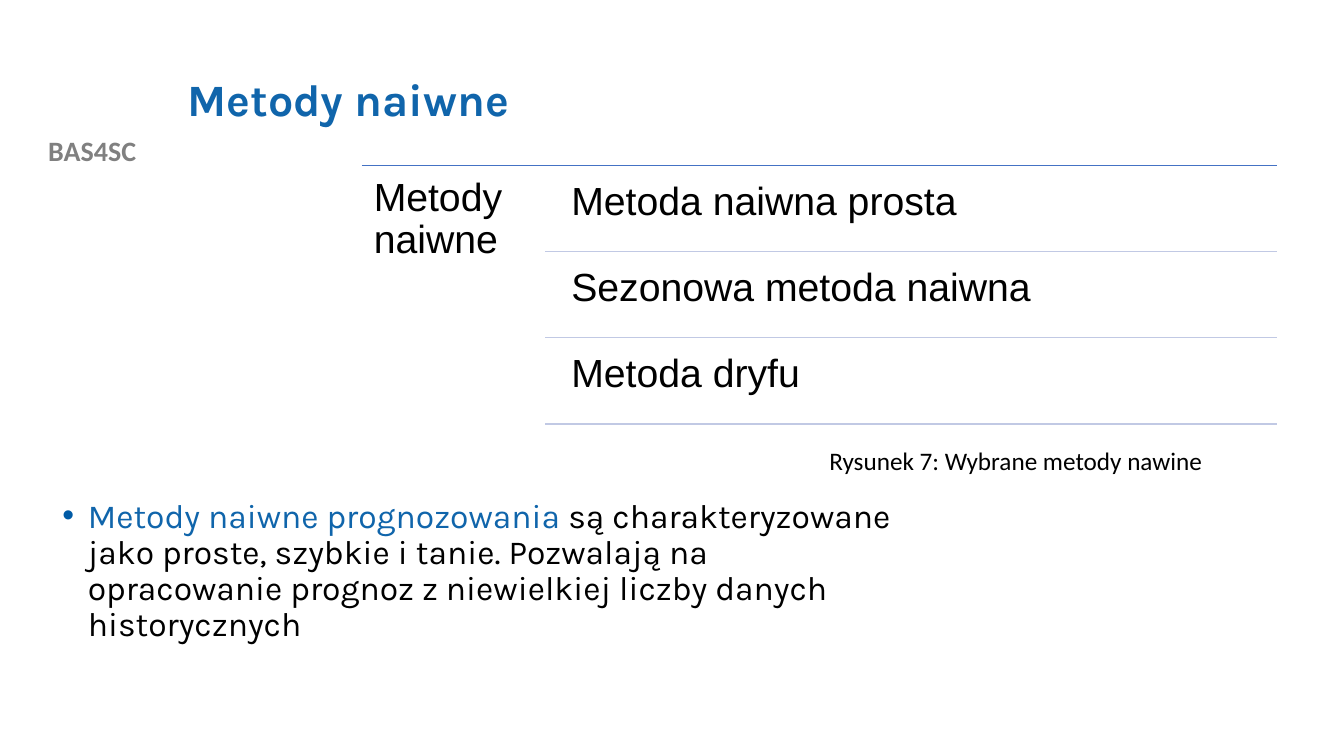
from pptx import Presentation
from pptx.dml.color import RGBColor
from pptx.enum.shapes import MSO_CONNECTOR
from pptx.enum.text import MSO_ANCHOR, MSO_AUTO_SIZE, PP_ALIGN
from pptx.oxml.ns import qn
from pptx.util import Cm, Pt
from lxml.etree import SubElement

BLUE = RGBColor(0x10, 0x65, 0xAB)
DOT = RGBColor(0x01, 0x5B, 0xA6)
GREY = RGBColor(0x80, 0x80, 0x80)
BLACK = RGBColor(0, 0, 0)
RULE = RGBColor(0x44, 0x72, 0xC4)
PALE = RGBColor(0xC1, 0xC9, 0xE4)


class Page:
    """Holds the text styles and the current slide."""

    styles = {
        "title": dict(name="Karla", size=Pt(32), bold=True, color=BLUE),
        "key": dict(name="Karla", size=Pt(24), color=BLUE),
        "body": dict(name="Karla", size=Pt(24), color=BLACK),
        "tag": dict(name="Calibri", size=Pt(20), bold=True, color=GREY),
        "note": dict(name="Calibri", size=Pt(18), color=BLACK),
        "label": dict(name="Arial", size=Pt(28), color=BLACK),
    }

    def __init__(self, deck):
        self.slide = deck.slides.add_slide(deck.slide_layouts[1])
        self.shapes = self.slide.shapes

    def add_run(self, para, text, style):
        run = para.add_run()
        run.text = text
        for key, value in self.styles[style].items():
            if key == "color":
                run.font.color.rgb = value
            else:
                setattr(run.font, key, value)

    def place(self, shape, box):
        for key, value in zip(("left", "top", "width", "height"), box):
            setattr(shape, key, Cm(value))

    def fill(self, shape, parts, anchor=MSO_ANCHOR.TOP, align=PP_ALIGN.LEFT, lead=0.9):
        frame = shape.text_frame
        frame.word_wrap = True
        frame.auto_size = MSO_AUTO_SIZE.NONE
        frame.vertical_anchor = anchor
        para = frame.paragraphs[0]
        form = dict(alignment=align, line_spacing=lead, space_before=Pt(0))
        for key, value in form.items():
            setattr(para, key, value)
        for text, style in parts:
            self.add_run(para, text, style)
        return para

    def title(self, text, box):
        shape = self.shapes.title
        self.place(shape, box)
        self.fill(shape, [(text, "title")], MSO_ANCHOR.MIDDLE)

    def bullet(self, parts, box):
        shape = self.slide.placeholders[1]
        self.place(shape, box)
        props = self.fill(shape, parts)._p.get_or_add_pPr()
        props.set("marL", str(Cm(0.64)))
        props.set("indent", str(-Cm(0.64)))
        color = SubElement(props, qn("a:buClr"))
        SubElement(color, qn("a:srgbClr")).set("val", str(DOT))
        SubElement(props, qn("a:buFont")).set("typeface", "Arial")
        SubElement(props, qn("a:buChar")).set("char", "•")

    def text(self, text, style, box, align=PP_ALIGN.LEFT, lead=1.0, inset=None):
        shape = self.shapes.add_textbox(*map(Cm, box))
        self.fill(shape, [(text, style)], align=align, lead=lead)
        if inset is not None:
            for side in ("left", "top", "right", "bottom"):
                setattr(shape.text_frame, "margin_" + side, Cm(inset))

    def line(self, left, right, y, color):
        rule = self.shapes.add_connector(
            MSO_CONNECTOR.STRAIGHT, Cm(left), Cm(y), Cm(right), Cm(y))
        rule.line.color.rgb = color
        rule.line.width = Pt(1)
        SubElement(rule._element.spPr, qn("a:effectLst"))


def main():
    deck = Presentation()
    deck.slide_width, deck.slide_height = Cm(33.87), Cm(19.05)
    page = Page(deck)

    # Heading and project tag
    page.text("BAS4SC", "tag", (0, 3.25, 4.65, 1.12), PP_ALIGN.CENTER)
    page.title("Metody naiwne", (4.47, 1.02, 27.08, 3.1))

    # Description
    page.bullet([
        ("Metody naiwne prognozowania ", "key"),
        ("są charakteryzowane jako proste, szybkie i tanie. Pozwalają na "
         "opracowanie prognoz z niewielkiej liczby danych historycznych", "body"),
    ], (1.32, 12.45, 21.67, 5.59))

    # Diagram: one group on the left, its methods on the right
    left, mid, right, top, step = 9.12, 13.74, 32.18, 4.17, 2.17
    page.line(left, right, top, RULE)
    page.text("Metody naiwne", "label", (left, top, mid - left, 3 * step),
              lead=0.9, inset=0.3)
    methods = ("Metoda naiwna prosta", "Sezonowa metoda naiwna", "Metoda dryfu")
    for row, name in enumerate(methods):
        y = top + row * step
        page.text(name, "label", (mid + 0.36, y + 0.1, right - mid - 0.36, 2.06),
                  lead=0.9, inset=0.3)
        page.line(mid, right, y + step, PALE)

    # Caption
    page.text("Rysunek 7: Wybrane metody nawine", "note", (20.65, 11.1, 10.54, 1.02))

    deck.save("out.pptx")


if __name__ == "__main__":
    main()
